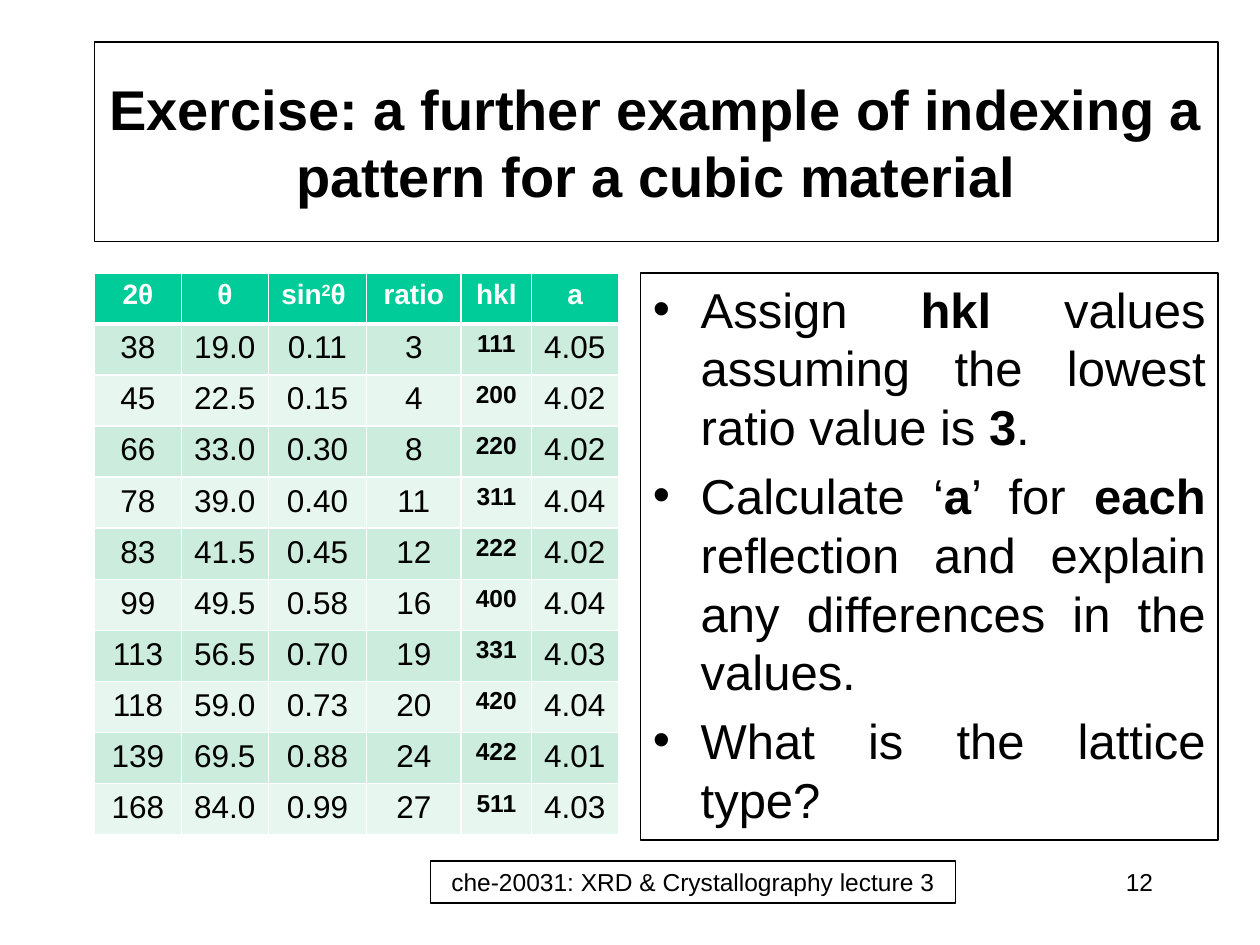
from lxml.etree import SubElement
from pptx import Presentation
from pptx.dml.color import RGBColor
from pptx.enum.text import MSO_ANCHOR as Anchor, MSO_AUTO_SIZE as Auto, PP_ALIGN as Align
from pptx.oxml.ns import qn
from pptx.util import Inches, Pt

BLACK = RGBColor(0, 0, 0)
WHITE = RGBColor(0xFF, 0xFF, 0xFF)
GREEN = RGBColor(0x00, 0xCC, 0x99)
MINT = RGBColor(0xCC, 0xEC, 0xDE)
PALE = RGBColor(0xE7, 0xF6, 0xEF)

UNIT = Inches(1) // 12  # the slide is a grid of 120 columns by 90 rows
FONT = "Arial"
LEFT, TOP, BASE = 9, 26, 82

WIDTHS = [0.69, 0.69, 0.78, 0.75, 0.56, 0.69]
HEADS = ["2θ", "θ", "sin^2^θ ", "ratio", "hkl", "a"]
PEAKS = [
    ("38", "19.0", "0.11", "3", "111", "4.05"),
    ("45", "22.5", "0.15", "4", "200", "4.02"),
    ("66", "33.0", "0.30", "8", "220", "4.02"),
    ("78", "39.0", "0.40", "11", "311", "4.04"),
    ("83", "41.5", "0.45", "12", "222", "4.02"),
    ("99", "49.5", "0.58", "16", "400", "4.04"),
    ("113", "56.5", "0.70", "19", "331", "4.03"),
    ("118", "59.0", "0.73", "20", "420", "4.04"),
    ("139", "69.5", "0.88", "24", "422", "4.01"),
    ("168", "84.0", "0.99", "27", "511", "4.03"),
]
TASKS = [
    "Assign *hkl* values assuming the lowest ratio value is *3*.",
    "Calculate ‘*a*’ for *each* reflection and explain any differences in the values.",
    "What is the lattice type?",
]


def grid(*cells):
    return [UNIT * n for n in cells]


def add_run(para, text, size, color=BLACK, bold=False):
    run = para.add_run()
    run.text = text
    font = run.font
    font.name, font.size, font.bold = FONT, Pt(size), bold
    font.color.rgb = color
    return run


def frame(shape):
    shape.line.color.rgb = BLACK
    shape.line.width = Pt(0.75)


def add_title(slide, text):
    title = slide.shapes.title
    title.left, title.top, title.width, title.height = grid(LEFT, 4, 107, 19)
    frame(title)
    body = title.text_frame
    body.auto_size, body.vertical_anchor = Auto.NONE, Anchor.MIDDLE
    para = body.paragraphs[0]
    para.alignment = Align.CENTER
    add_run(para, text, 32, bold=True)


def add_box(slide, *cells):
    box = slide.shapes.add_textbox(*grid(*cells))
    box.text_frame.word_wrap = True
    return box


def add_label(slide, text, align, *cells):
    box = add_box(slide, *cells)
    para = box.text_frame.paragraphs[0]
    para.alignment = align
    add_run(para, text, 14)
    return box


def add_bullets(slide, items, *cells):
    """Words between asterisks are bold."""
    box = add_box(slide, *cells)
    frame(box)
    body = box.text_frame
    for i, item in enumerate(items):
        para = body.add_paragraph() if i else body.paragraphs[0]
        para.alignment = Align.JUSTIFY
        para.space_before = Pt(5.6)
        props = para._p.get_or_add_pPr()
        props.set("marL", str(Inches(0.38)))
        props.set("indent", str(-Inches(0.38)))
        SubElement(props, qn("a:buFont"), typeface=FONT)
        SubElement(props, qn("a:buChar"), char="•")
        for j, part in enumerate(item.split("*")):
            add_run(para, part, 28, bold=j % 2 == 1)


def set_edges(cell, top, bottom):
    """Draw white borders, 1 pt at the sides."""
    props = cell._tc.get_or_add_tcPr()
    for i, (side, size) in enumerate(zip("LRTB", (1, 1, top, bottom))):
        line = SubElement(props, qn(f"a:ln{side}"), w=str(Pt(size)))
        fill = SubElement(line, qn("a:solidFill"))
        SubElement(fill, qn("a:srgbClr"), val=str(WHITE))
        props.insert(i, line)


def fill_cell(cell, text, fill, align, **style):
    """Text between carets is raised."""
    cell.fill.solid()
    cell.fill.fore_color.rgb = fill
    para = cell.text_frame.paragraphs[0]
    para.alignment = align
    for i, part in enumerate(text.split("^")):
        run = add_run(para, part, **style)
        if i % 2:
            run.font._element.set("baseline", "30000")


def add_peaks(slide):
    rows = [HEADS, *PEAKS]
    area = grid(LEFT, TOP, 50, 53.5)
    table = slide.shapes.add_table(len(rows), len(HEADS), *map(int, area)).table
    for col, width in zip(table.columns, WIDTHS):
        col.width = Inches(width)
    for r, row in enumerate(rows):
        for c, text in enumerate(row):
            cell = table.cell(r, c)
            align = Align.CENTER
            if r == 0:
                fill, style = GREEN, dict(size=16, color=WHITE, bold=True)
            else:
                fill = MINT if r % 2 else PALE
                index = HEADS[c] == "hkl"
                style = dict(size=14 if index else 18, bold=index)
                if HEADS[c] == "a":
                    align = Align.LEFT
            fill_cell(cell, text, fill, align, **style)
            set_edges(cell, 3 if r == 1 else 1, 3 if r == 0 else 1)


def main():
    deck = Presentation()
    deck.slide_width, deck.slide_height = grid(120, 90)
    slide = deck.slides.add_slide(deck.slide_layouts[5])
    add_title(slide, "Exercise: a further example of indexing a pattern for a cubic material")
    add_peaks(slide)
    add_bullets(slide, TASKS, 61, TOP, 55, 54)
    frame(add_label(slide, "che-20031: XRD & Crystallography lecture 3",
                    Align.CENTER, 41, BASE, 50, 4))
    add_label(slide, "12", Align.RIGHT, 86, BASE, 25, 6)
    deck.save("out.pptx")


if __name__ == "__main__":
    main()
